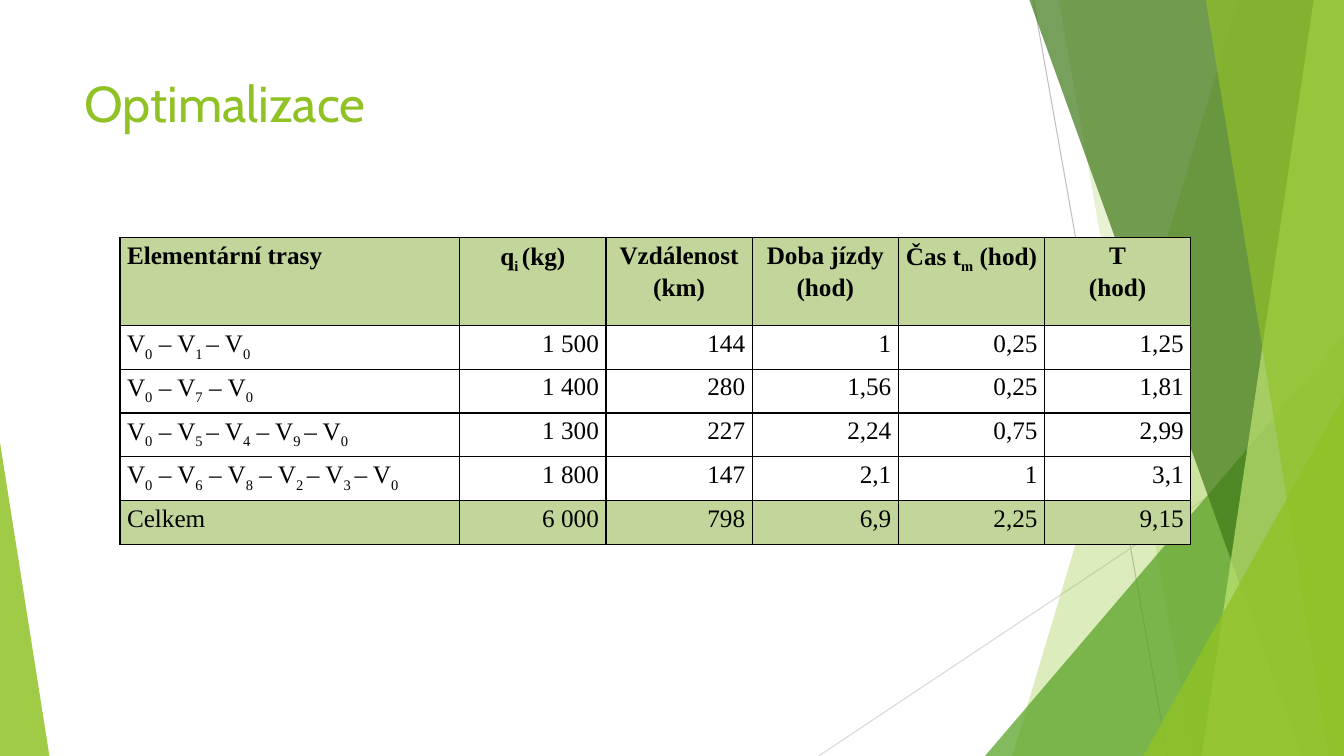
from lxml import etree
from pptx import Presentation
from pptx.dml.color import RGBColor
from pptx.enum.shapes import MSO_CONNECTOR, MSO_SHAPE
from pptx.enum.text import MSO_ANCHOR, PP_ALIGN
from pptx.oxml.ns import qn
from pptx.util import Inches, Pt

STRAIGHT = MSO_CONNECTOR.STRAIGHT
TRIANGLE = MSO_SHAPE.ISOSCELES_TRIANGLE
TOP = MSO_ANCHOR.TOP
LEFT, CENTER, RIGHT = PP_ALIGN.LEFT, PP_ALIGN.CENTER, PP_ALIGN.RIGHT

BLACK = RGBColor(0x00, 0x00, 0x00)
WHITE = RGBColor(0xFF, 0xFF, 0xFF)
LIME = RGBColor(0x90, 0xC2, 0x26)
GREEN = RGBColor(0x54, 0xA0, 0x21)
DARK_GREEN = RGBColor(0x3F, 0x78, 0x19)
PALE_LIME = RGBColor(0xC0, 0xE4, 0x74)
SAGE = RGBColor(0xC2, 0xD6, 0x9B)
GREY = RGBColor(0xBF, 0xBF, 0xBF)
LIGHT_GREY = RGBColor(0xD9, 0xD9, 0xD9)

WIDTH, HEIGHT = 13.33, 7.5
TABLE_HEIGHT, HEADER_HEIGHT = 3.04, 0.87
COLUMN_WIDTHS = [3.37] + [1.45] * 5

# Text between a pair of bars is set as subscript.
ROUTES = [
    ["Elementární trasy", "q|i |(kg)", "Vzdálenost (km)", "Doba jízdy (hod)",
     "Čas t|m| (hod)", "T\n(hod)"],
    ["V|0| – V|1 |– V|0|", "1 500", "144", "1", "0,25", "1,25"],
    ["V|0| – V|7| – V|0|", "1 400", "280", "1,56", "0,25", "1,81"],
    ["V|0| – V|5 |– V|4| – V|9 |– V|0|", "1 300", "227", "2,24", "0,75", "2,99"],
    ["V|0| – V|6| – V|8| – V|2 |– V|3 |– V|0|", "1 800", "147", "2,1", "1", "3,1"],
    ["Celkem", "6 000", "798", "6,9", "2,25", "9,15"],
]


def set_format(target, values):
    for name, value in values.items():
        setattr(target, name, value)


def add_line(page, start, end, color):
    line = page.shapes.add_connector(
        STRAIGHT, *[Inches(value) for value in (*start, *end)])
    line.line.color.rgb = color
    line.line.width = Pt(0.75)
    etree.SubElement(line._element.spPr, qn("a:effectLst"))


def paint(shape, color, opacity):
    """Fill a shape with a see-through colour; opacity is in percent."""
    shape.shadow.inherit = False
    shape.fill.solid()
    shape.fill.fore_color.rgb = color
    shape.line.fill.background()
    tint = shape._element.spPr.find(qn("a:solidFill"))[0]
    etree.SubElement(tint, qn("a:alpha"), val=str(opacity * 1000))


def add_ray(page, top_x, bottom_x, color, opacity):
    """Fill the area between a slanted edge and the right side of the slide."""
    outline = page.shapes.build_freeform(Inches(top_x), 0)
    corners = [(WIDTH, 0), (WIDTH, HEIGHT), (bottom_x, HEIGHT)]
    outline.add_line_segments([(Inches(x), Inches(y)) for x, y in corners])
    paint(outline.convert_to_shape(), color, opacity)


def add_triangle(page, left, top, width, apex, color, opacity):
    """Stand a triangle on the bottom edge; apex runs from 0 (left) to 1."""
    triangle = page.shapes.add_shape(
        TRIANGLE, Inches(left), Inches(top), Inches(width), Inches(HEIGHT - top))
    triangle.adjustments[0] = apex
    paint(triangle, color, opacity)


def add_background(page):
    add_line(page, (10.25, 0), (11.58, HEIGHT), GREY)
    add_line(page, (WIDTH, 4.03), (8.12, HEIGHT), LIGHT_GREY)
    add_ray(page, 12.28, 10.04, LIME, 30)
    add_ray(page, 10.5, 11.83, LIME, 20)
    add_triangle(page, 9.77, 3.33, 3.56, 1, GREEN, 72)
    add_ray(page, 10.21, 12.91, DARK_GREEN, 70)
    add_ray(page, 13.03, 11.92, PALE_LIME, 70)
    add_ray(page, 11.96, 13.18, LIME, 65)
    add_triangle(page, 11.34, 3.93, 1.99, 1, LIME, 80)
    add_triangle(page, 0, 4.39, 0.49, 0, LIME, 85)


def add_title(page, text):
    box = page.shapes.add_textbox(Inches(0.74), Inches(0.67), Inches(9.4), Inches(1.44))
    set_format(box.text_frame, {"word_wrap": True, "vertical_anchor": TOP})
    span = box.text_frame.paragraphs[0].add_run()
    span.text = text
    set_format(span.font, {"name": "Cabin", "size": Pt(36)})
    span.font.color.rgb = LIME


def add_spans(para, text, bold):
    for index, part in enumerate(text.split("|")):
        if not part:
            continue
        span = para.add_run()
        span.text = part
        set_format(span.font, {"name": "Times New Roman", "size": Pt(18), "bold": bold})
        span.font.color.rgb = BLACK
        if index % 2:
            span.font._element.set("baseline", "-25000")


def add_borders(cell):
    properties = cell._tc.get_or_add_tcPr()
    for side in ("a:lnL", "a:lnR", "a:lnT", "a:lnB"):
        border = etree.SubElement(properties, qn(side), w=str(Pt(1)))
        fill = etree.SubElement(border, qn("a:solidFill"))
        etree.SubElement(fill, qn("a:srgbClr"), val=str(BLACK))


def fill_cell(cell, text, align, color, bold):
    add_borders(cell)
    cell.fill.solid()
    cell.fill.fore_color.rgb = color
    set_format(cell, {"margin_left": Inches(0.07), "margin_right": Inches(0.07),
                      "margin_top": 0, "margin_bottom": 0, "vertical_anchor": TOP})
    frame = cell.text_frame
    for index, line in enumerate(text.split("\n")):
        para = frame.add_paragraph() if index else frame.paragraphs[0]
        set_format(para, {"alignment": align, "line_spacing": 1.15})
        add_spans(para, line, bold)


def add_route_table(page):
    table = page.shapes.add_table(
        len(ROUTES), len(COLUMN_WIDTHS), Inches(1.19), Inches(2.36),
        Inches(sum(COLUMN_WIDTHS)), Inches(TABLE_HEIGHT)).table
    for column, width in zip(table.columns, COLUMN_WIDTHS):
        column.width = Inches(width)
    last = len(ROUTES) - 1
    for row, values in enumerate(ROUTES):
        is_header = row == 0
        body_height = (TABLE_HEIGHT - HEADER_HEIGHT) / last
        table.rows[row].height = Inches(HEADER_HEIGHT if is_header else body_height)
        color = SAGE if row in (0, last) else WHITE
        for column, text in enumerate(values):
            align = LEFT if column == 0 else CENTER if is_header else RIGHT
            fill_cell(table.cell(row, column), text, align, color, is_header)


def main():
    deck = Presentation()
    set_format(deck, {"slide_width": Inches(WIDTH), "slide_height": Inches(HEIGHT)})
    page = deck.slides.add_slide(deck.slide_layouts[6])
    add_background(page)
    add_title(page, "Optimalizace")
    add_route_table(page)
    deck.save("out.pptx")


if __name__ == "__main__":
    main()
